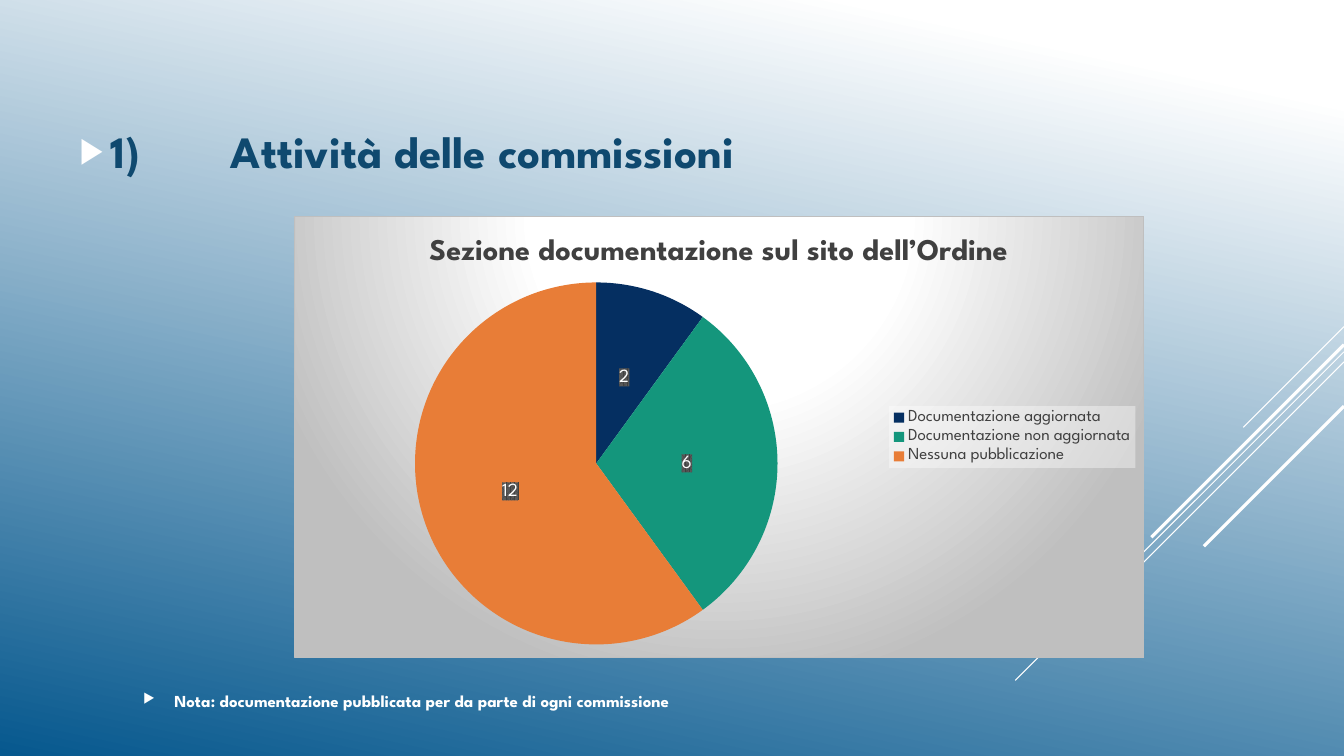
from lxml import etree
from pptx import Presentation
from pptx.chart.data import CategoryChartData as PieData
from pptx.dml.color import RGBColor as Rgb
from pptx.enum.chart import XL_CHART_TYPE as Kind, XL_LABEL_POSITION as Spot
from pptx.enum.chart import XL_LEGEND_POSITION as Side
from pptx.enum.shapes import MSO_CONNECTOR as Wire
from pptx.enum.text import MSO_ANCHOR as Anchor, MSO_AUTO_SIZE as Fit
from pptx.oxml import parse_xml
from pptx.oxml.ns import nsdecls, qn
from pptx.util import Inches, Pt

FONT = "League Spartan"
HUES = {"white": "FFFFFF", "deep": "06588E", "head": "0F496F",
        "text": "404040", "grey": "BFBFBF", "dark": "595959",
        "navy": "052F61", "green": "14967C", "orange": "E87D37"}

# Rays at the right edge: start height, length on each axis, weight
RAYS = [(3.24, 1, 0.75), (3.49, 3.26, 0.75), (3.59, 2.07, 0.75),
        (3.42, 1.91, 2.25), (4.03, 1.39, 2.25)]

# Slices: name, share, label, colour
PARTS = [("Documentazione aggiornata", 10, "2", "navy"),
         ("Documentazione non aggiornata", 30, "6", "green"),
         ("Nessuna pubblicazione", 60, "12", "orange")]


def hue(name):
    return Rgb.from_string(HUES[name])


def style(font, size, color, bold=False):
    font.name, font.size, font.bold = FONT, Pt(size), bold
    font.color.rgb = hue(color)


def paint(slide):
    fill = slide.background.fill
    fill.gradient()
    fill.gradient_angle = 258
    for stop, (pos, name) in zip(fill.gradient_stops,
                                 [(0.1, "white"), (1, "deep")]):
        stop.position = pos
        stop.color.rgb = hue(name)


def add_ray(slide, top, span, width):
    edge = 13.33
    ray = slide.shapes.add_connector(
        Wire.STRAIGHT, Inches(edge), Inches(top),
        Inches(edge - span), Inches(top + span))
    ray.line.color.rgb = hue("white")
    ray.line.width = Pt(width)
    etree.SubElement(ray._element.spPr, qn("a:effectLst"))


def set_item(box, text, size, color, tabs=()):
    """Fill a box with one line led by a white triangle."""
    frame = box.text_frame
    frame.word_wrap, frame.auto_size = True, Fit.NONE
    frame.vertical_anchor = Anchor.MIDDLE
    frame.text = text
    para = frame.paragraphs[0]
    props = para._p.get_or_add_pPr()
    props.set("marL", str(Inches(0.31)))
    props.set("indent", str(-Inches(0.31)))
    mark = etree.SubElement(props, qn("a:buClr"))
    etree.SubElement(mark, qn("a:srgbClr"), val=HUES["white"])
    etree.SubElement(props, qn("a:buSzPct"), val="80000")
    etree.SubElement(props, qn("a:buChar"), char="▶")
    if tabs:
        stops = etree.SubElement(props, qn("a:tabLst"))
        for pos in tabs:
            etree.SubElement(stops, qn("a:tab"),
                             pos=str(Inches(pos)), algn="l")
    para.space_before = Pt(0)
    for run in para.runs:
        style(run.font, size, color, True)


def place(parent, x, y, w, h, inner=False):
    """Fix a chart part, in shares of the chart area."""
    old = parent.find(qn("c:layout"))
    if old is not None:
        parent.remove(old)
    target = '<c:layoutTarget val="inner"/>' if inner else ""
    layout = parse_xml(
        f'<c:layout {nsdecls("c")}><c:manualLayout>{target}'
        '<c:xMode val="edge"/><c:yMode val="edge"/>'
        f'<c:x val="{x}"/><c:y val="{y}"/><c:w val="{w}"/><c:h val="{h}"/>'
        '</c:manualLayout></c:layout>')
    if inner:
        parent.insert(0, layout)
    else:
        parent.find(qn("c:legendPos")).addnext(layout)


def look(fill, line=""):
    return parse_xml(f'<c:spPr {nsdecls("c", "a")}>{fill}{line}</c:spPr>')


def tint(name, inner=""):
    return f'<a:srgbClr val="{HUES[name]}">{inner}</a:srgbClr>'


def add_labels(plot):
    plot.vary_by_categories = True
    plot.has_data_labels = True
    labels = plot.data_labels
    labels.show_percentage, labels.show_value = True, False
    labels.position = Spot.CENTER
    style(labels.font, 13.3, "white", True)
    for i, (_, _, text, color) in enumerate(PARTS):
        point = plot.series[0].points[i]
        point.format.fill.solid()
        point.format.fill.fore_color.rgb = hue(color)
        label = point.data_label
        label.text_frame.text = text
        style(label.text_frame.paragraphs[0].runs[0].font, 13.3, "white")
        label.position = Spot.CENTER
    backs = (f'<a:pattFill prst="pct75"><a:fgClr>{tint("text")}</a:fgClr>'
             f'<a:bgClr>{tint("dark")}</a:bgClr></a:pattFill>')
    for label in list(plot.series[0]._element.iter(qn("c:dLbl"))):
        label.find(qn("c:tx")).addnext(look(backs))


def add_pie(slide):
    data = PieData()
    data.categories = [part[0] for part in PARTS]
    data.add_series("Series 1", [part[1] for part in PARTS])
    chart = slide.shapes.add_chart(
        Kind.PIE, Inches(2.92), Inches(2.14), Inches(8.43), Inches(4.39),
        data).chart
    style(chart.font, 10, "white")

    # Title
    chart.has_title = True
    title = chart.chart_title
    title.include_in_layout = False
    title.text_frame.text = "Sezione documentazione sul sito dell’Ordine"
    style(title.text_frame.paragraphs[0].runs[0].font, 21.6, "text", True)

    # Slices and legend
    add_labels(chart.plots[0])
    chart.has_legend = True
    legend = chart.legend
    legend.position, legend.include_in_layout = Side.RIGHT, False
    style(legend.font, 12, "text")
    place(legend._element, 0.7, 0.43, 0.29, 0.14)
    veil = tint("white", '<a:alpha val="39000"/>')
    legend._element.find(qn("c:txPr")).addprevious(
        look(f"<a:solidFill>{veil}</a:solidFill>"))

    # Plot and chart area
    space = chart._chartSpace
    place(space.chart.plotArea, 0.14, 0.15, 0.43, 0.82, True)
    stops = "".join(f'<a:gs pos="{pos}">{tint(name)}</a:gs>'
                    for pos, name in [(0, "white"), (39000, "white"),
                                      (100000, "grey")])
    space.chart.addnext(look(
        f'<a:gradFill><a:gsLst>{stops}</a:gsLst><a:path path="circle">'
        '<a:fillToRect l="50000" t="-80000" r="50000" b="180000"/>'
        '</a:path></a:gradFill>',
        f'<a:ln w="{Pt(0.75)}"><a:solidFill>{tint("grey")}</a:solidFill>'
        '</a:ln>'))


def main():
    deck = Presentation()
    deck.slide_width, deck.slide_height = Inches(13.33), Inches(7.5)
    slide = deck.slides.add_slide(deck.slide_layouts[1])
    paint(slide)
    for ray in RAYS:
        add_ray(slide, *ray)

    # Heading in the body placeholder
    title = slide.shapes.title
    title._element.getparent().remove(title._element)
    head = slide.placeholders[1]
    head.left, head.top = Inches(0.69), Inches(1.04)
    head.width, head.height = Inches(11.01), Inches(0.9)
    set_item(head, "1)\t\tAttività delle commissioni", 32, "head", (1, 1.5))

    # Chart and note
    add_pie(slide)
    note = slide.shapes.add_textbox(
        Inches(1.32), Inches(6.75), Inches(11.01), Inches(0.4))
    set_item(note, "Nota: documentazione pubblicata per da parte di ogni "
             "commissione", 12, "white")
    deck.save("out.pptx")


if __name__ == "__main__":
    main()
